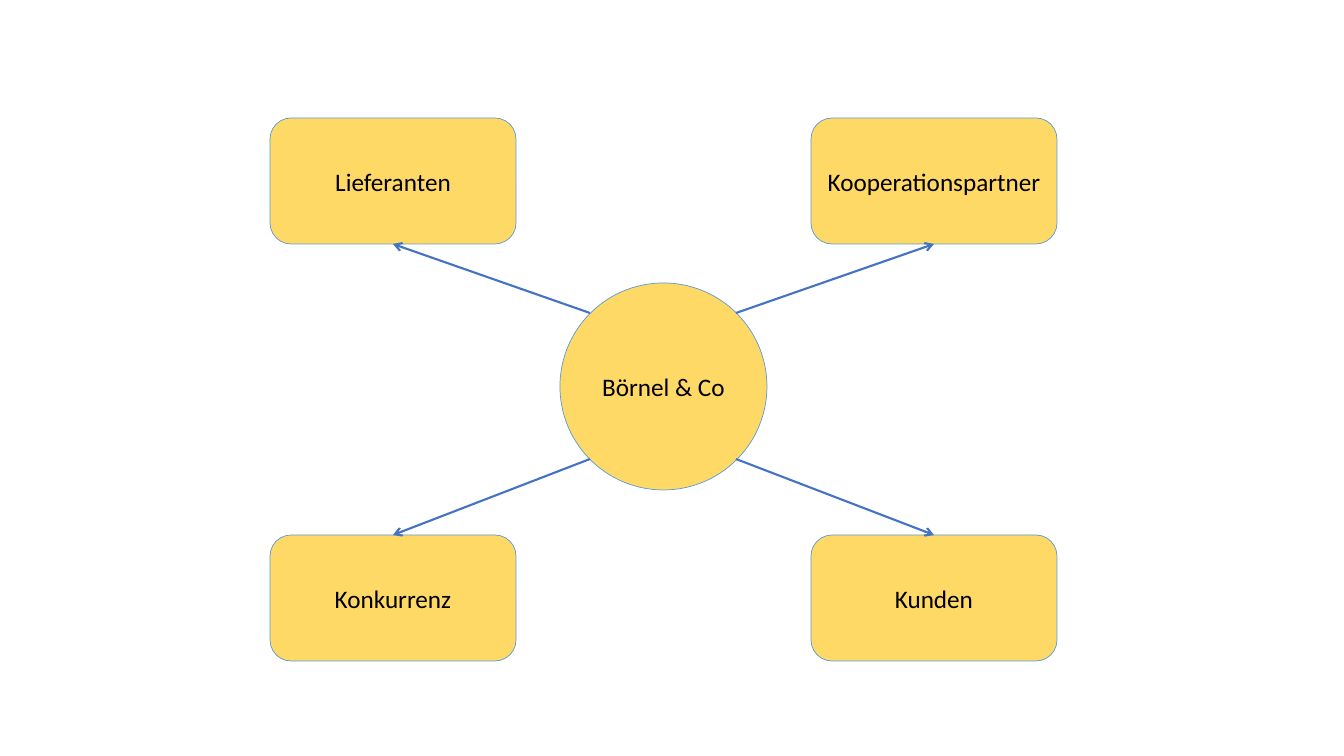
"""Build a slide of a company and the four groups around it."""
from lxml import etree
from pptx import Presentation
from pptx import util as u
from pptx.dml.color import RGBColor
from pptx.enum import shapes, text
from pptx.oxml.ns import qn

PX = 914400 / 100.8
YELLOW = RGBColor(0xFF, 0xD9, 0x66)
OUTLINE = RGBColor(0x5B, 0x9B, 0xD5)
ARROW = RGBColor(0x44, 0x72, 0xC4)
BLACK = RGBColor(0, 0, 0)


def px(n):
    return u.Emu(round(n * PX))


def add_node(label, *, kind, left, top, width, height, size=18, font="Calibri", color=BLACK):
    node = slide.shapes.add_shape(kind, px(left), px(top), px(width), px(height))
    node.shadow.inherit = False
    node.fill.solid()
    node.fill.fore_color.rgb = YELLOW
    node.line.color.rgb = OUTLINE
    node.line.width = u.Pt(0.5)
    frame = node.text_frame
    frame.word_wrap = True
    frame.vertical_anchor = text.MSO_ANCHOR.MIDDLE
    paragraph = frame.paragraphs[0]
    paragraph.alignment = text.PP_ALIGN.CENTER
    run = paragraph.add_run()
    run.text = label
    run.font.size = u.Pt(size)
    run.font.name = font
    run.font.color.rgb = color
    return node


deck = Presentation()
deck.slide_width, deck.slide_height = px(1344), px(756)
slide = deck.slides.add_slide(deck.slide_layouts[6])

LEFT, RIGHT, TOP, BOTTOM = 270, 811, 118, 535
groups = [
    ("Lieferanten", LEFT, TOP),
    ("Kooperationspartner", RIGHT, TOP),
    ("Konkurrenz", LEFT, BOTTOM),
    ("Kunden", RIGHT, BOTTOM),
]
partners = [
    add_node(label, kind=shapes.MSO_SHAPE.ROUNDED_RECTANGLE,
             left=left, top=top, width=246, height=126)
    for label, left, top in groups
]
add_node("Börnel & Co", kind=shapes.MSO_SHAPE.OVAL, left=560, top=283, width=207, height=207)

CENTER_X, CENTER_Y, DIAGONAL = 663, 386, 73
for partner, (label, left, top) in zip(partners, groups):
    start_x = px(CENTER_X + (DIAGONAL if left == RIGHT else -DIAGONAL))
    start_y = px(CENTER_Y + (DIAGONAL if top == BOTTOM else -DIAGONAL))
    arrow = slide.shapes.add_connector(
        shapes.MSO_CONNECTOR.STRAIGHT, start_x, start_y, start_x, start_y)
    arrow.end_connect(partner, 0 if top == BOTTOM else 2)
    arrow.line.color.rgb = ARROW
    arrow.line.width = u.Pt(1.5)
    etree.SubElement(arrow.line._get_or_add_ln(), qn("a:tailEnd"), type="arrow")
    etree.SubElement(arrow._element.spPr, qn("a:effectLst"))

deck.save("out.pptx")
